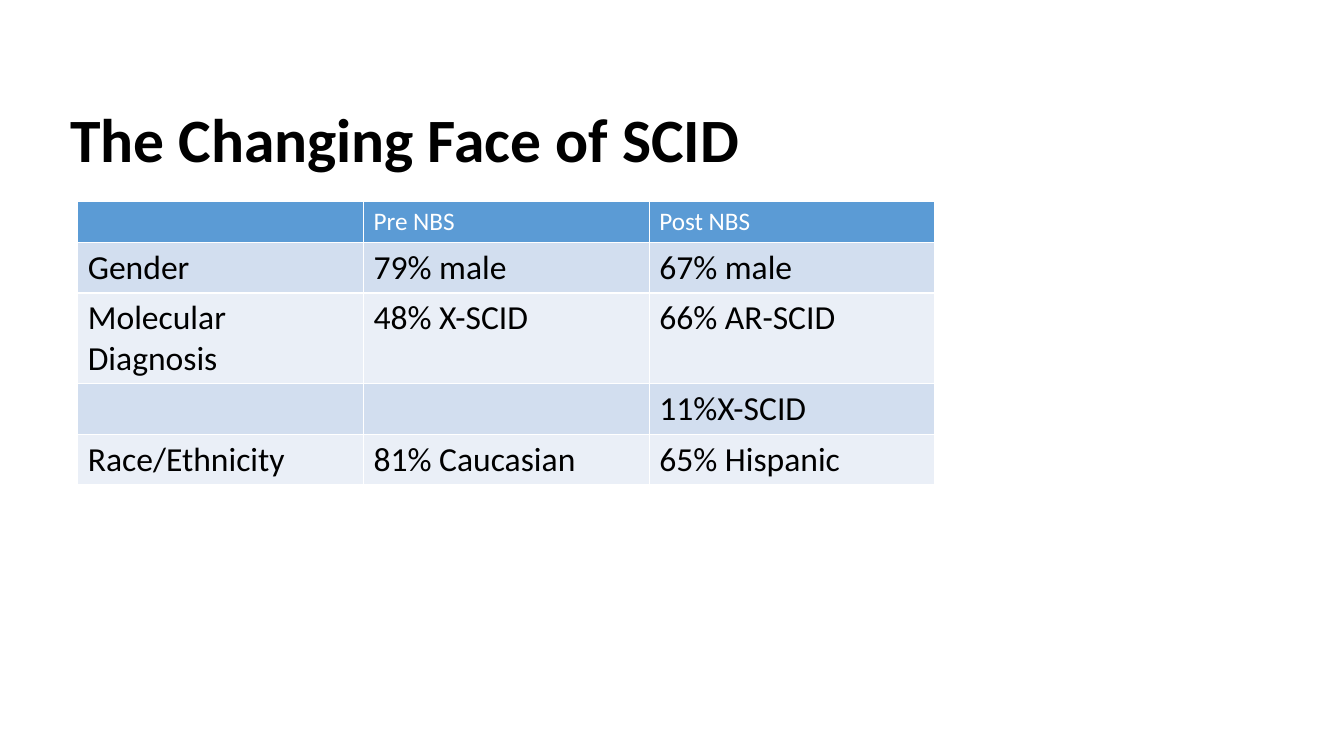
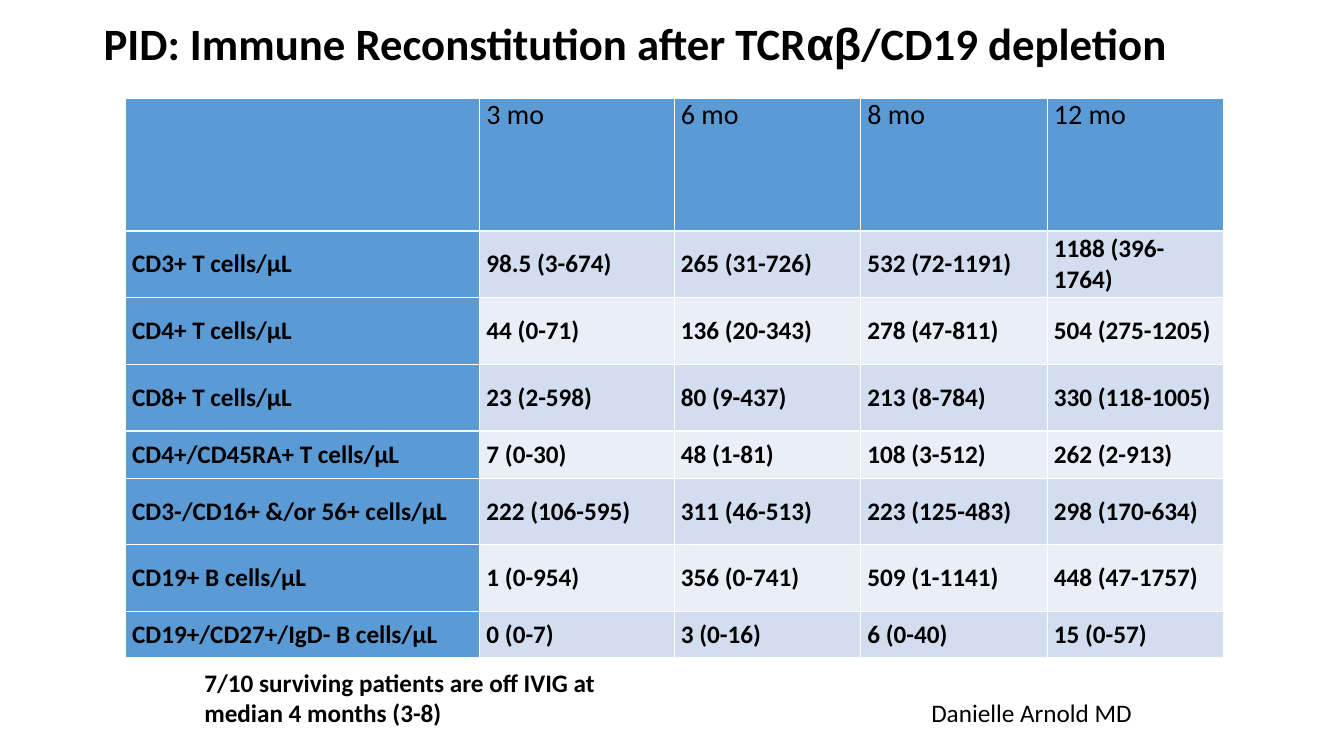
import lxml.etree
import pptx
import pptx.dml.color
import pptx.enum.text
import pptx.oxml.ns
import pptx.util

Cm = pptx.util.Cm
Pt = pptx.util.Pt
MIDDLE = pptx.enum.text.MSO_ANCHOR.MIDDLE
TOP = pptx.enum.text.MSO_ANCHOR.TOP

COLORS = {
    "text": "000000",
    "white": "FFFFFF",
    "header": "5B9BD5",
    "odd": "D2DEEF",
    "even": "EAEFF7",
}


def rgb(name):
    return pptx.dml.color.RGBColor.from_string(COLORS[name])


def write(frame, text, size=18, bold=False, color="text", font="Calibri", spacing=None):
    """Fill a frame with a string, or with a list of (string, font) spans."""
    para = frame.paragraphs[0]
    if spacing:
        para.line_spacing = spacing
    spans = [(text, font)] if isinstance(text, str) else text
    for words, face in spans:
        span = para.add_run()
        span.text = words
        span.font.name = face
        span.font.size = Pt(size)
        span.font.bold = bold
        span.font.color.rgb = rgb(color)


def add_borders(cell, color="white", width=1):
    """Draw all four edges; lines must come before the fill in the cell XML."""
    properties = cell._tc.get_or_add_tcPr()
    qn = pptx.oxml.ns.qn
    for position, edge in enumerate(("a:lnL", "a:lnR", "a:lnT", "a:lnB")):
        line = lxml.etree.Element(qn(edge), w=str(Pt(width)))
        fill = lxml.etree.SubElement(line, qn("a:solidFill"))
        lxml.etree.SubElement(fill, qn("a:srgbClr"), val=COLORS[color])
        properties.insert(position, line)


class Slides:
    """The deck's style and the slide being built."""

    def __init__(self):
        self.deck = pptx.Presentation()
        self.deck.slide_width = Cm(33.87)
        self.deck.slide_height = Cm(19.05)
        self.page = None

    def new_page(self):
        self.page = self.deck.slides.add_slide(self.deck.slide_layouts[6])

    def text(self, place, text, anchor=TOP, wrap=True, **style):
        box = self.page.shapes.add_textbox(*map(Cm, place))
        box.text_frame.word_wrap = wrap
        box.text_frame.vertical_anchor = anchor
        write(box.text_frame, text, **style)

    def title(self, place, text, size):
        self.text(place, text, anchor=MIDDLE, size=size, bold=True, spacing=0.9)

    def table(self, left, top, widths, heights, rows, head, body,
              label_fill=False, anchor=TOP, margins=None):
        """Add a banded table; head and body are text formats."""
        grid = self.page.shapes.add_table(
            len(rows), len(widths), Cm(left), Cm(top),
            Cm(sum(widths)), Cm(sum(heights))).table
        for column, width in zip(grid.columns, widths):
            column.width = Cm(width)
        for r, (values, height) in enumerate(zip(rows, heights)):
            grid.rows[r].height = Cm(height)
            band = "odd" if r % 2 else "even"
            for c, value in enumerate(values):
                cell = grid.cell(r, c)
                cell.fill.solid()
                is_header = r == 0 or (label_fill and c == 0)
                cell.fill.fore_color.rgb = rgb("header" if is_header else band)
                add_borders(cell)
                cell.vertical_anchor = anchor if r else TOP
                if margins:
                    cell.margin_left = cell.margin_right = Cm(margins[0])
                    cell.margin_top = cell.margin_bottom = Cm(margins[1])
                if value:
                    write(cell.text_frame, value, **(body if r else head))

    def save(self):
        self.deck.save("out.pptx")


def build_changing_face(slides):
    slides.new_page()
    slides.title((1.52, 2.11, 26.85, 2.97), "The Changing Face of SCID", size=44)
    rows = [
        ("", "Pre NBS", "Post NBS"),
        ("Gender", "79% male", "67% male"),
        ("Molecular Diagnosis", "48% X-SCID", "66% AR-SCID"),
        ("", "", "11%X-SCID"),
        ("Race/Ethnicity", "81% Caucasian", "65% Hispanic"),
    ]
    slides.table(1.96, 5.08, [7.2] * 3, [1.03] * 5, rows,
                 head={"color": "white"}, body={"size": 24})


def build_reconstitution(slides):
    slides.new_page()
    slides.title((2.36, -0.69, 29.21, 3.68),
                 [("PID: Immune Reconstitution after TCR", "Calibri"),
                  ("αβ", "Arial"),
                  ("/CD19 depletion", "Calibri")], size=32)
    rows = [
        ("", "3 mo", "6 mo", "8 mo", "12 mo"),
        ("CD3+ T cells/μL", "98.5 (3-674)", "265 (31-726)", "532 (72-1191)", "1188 (396-1764)"),
        ("CD4+ T cells/μL", "44 (0-71)", "136 (20-343)", "278 (47-811)", "504 (275-1205)"),
        ("CD8+ T cells/μL", "23 (2-598)", "80 (9-437)", "213 (8-784)", "330 (118-1005)"),
        ("CD4+/CD45RA+ T cells/μL", "7 (0-30)", "48 (1-81)", "108 (3-512)", "262 (2-913)"),
        ("CD3-/CD16+ &/or 56+ cells/μL", "222 (106-595)", "311 (46-513)", "223 (125-483)",
         "298 (170-634)"),
        ("CD19+ B cells/μL", "1 (0-954)", "356 (0-741)", "509 (1-1141)", "448 (47-1757)"),
        ("CD19+/CD27+/IgD- B cells/μL", "0 (0-7)", "3 (0-16)", "6 (0-40)", "15 (0-57)"),
    ]
    slides.table(3.16, 2.47, [8.93, 4.9, 4.7, 4.7, 4.44],
                 [3.35, 1.68, 1.68, 1.68, 1.19, 1.68, 1.68, 1.17], rows,
                 head={"size": 20}, body={"bold": True},
                 label_fill=True, anchor=MIDDLE, margins=(0.17, 0))
    slides.text((4.9, 16.69, 11.02, 1.8),
                "7/10 surviving patients are off IVIG at median 4 months (3-8)", bold=True)
    slides.text((23.22, 17.45, 5.64, 1.02), "Danielle Arnold MD", wrap=False)


def main():
    slides = Slides()
    build_changing_face(slides)
    build_reconstitution(slides)
    slides.save()


if __name__ == "__main__":
    main()
